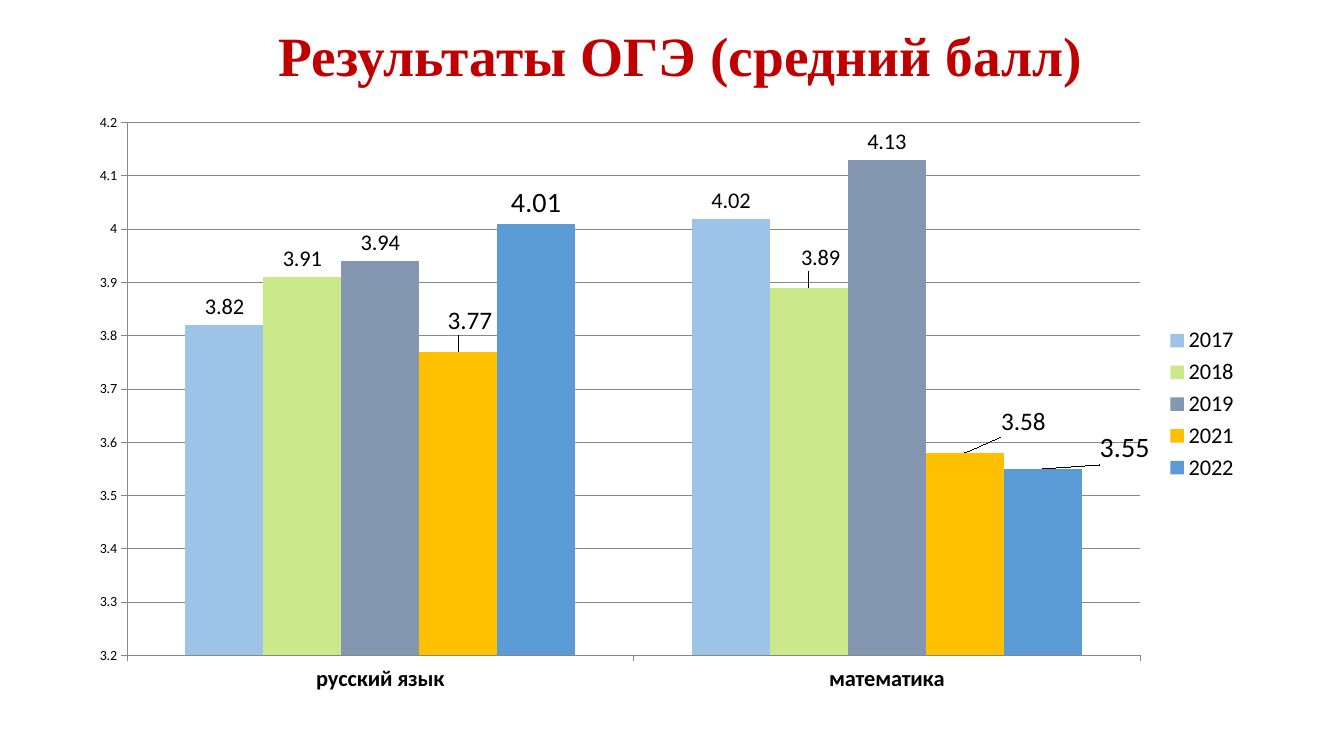
from lxml.etree import SubElement
from pptx import Presentation
from pptx.chart.data import CategoryChartData
from pptx.dml.color import RGBColor
from pptx.enum.chart import (XL_CHART_TYPE, XL_LABEL_POSITION,
                             XL_LEGEND_POSITION, XL_TICK_MARK)
from pptx.enum.text import MSO_ANCHOR, PP_ALIGN
from pptx.oxml import parse_xml
from pptx.oxml.ns import nsdecls, qn
from pptx.util import Inches, Pt

HUES = {"title": "C00000", "text": "000000", "grid": "888888",
        "2017": "9DC3E6", "2018": "CBE88A", "2019": "8497B0",
        "2021": "FFC000", "2022": "5B9BD5"}
TOPICS = ["русский язык", "математика"]
MARKS = {"2017": (3.82, 4.02), "2018": (3.91, 3.89), "2019": (3.94, 4.13),
         "2021": (3.77, 3.58), "2022": (4.01, 3.55)}
SIZES = {"2021": 18, "2022": 20}
SHIFTS = {"2018": {1: (0.01, -0.02)},
          "2021": {0: (0.01, -0.02), 1: (0.05, -0.02)},
          "2022": {1: (0.07, 0)}}


def layout(**items):
    node = parse_xml(f"<c:layout {nsdecls('c')}><c:manualLayout/></c:layout>")
    for name, value in items.items():
        SubElement(node[0], qn(f"c:{name}")).set("val", str(value))
    return node


class Deck:
    def __init__(self):
        self.show = Presentation()
        self.show.slide_width = Inches(13.33)
        self.show.slide_height = Inches(7.5)
        self.slide = self.show.slides.add_slide(self.show.slide_layouts[5])

    def hue(self, name):
        return RGBColor.from_string(HUES[name])

    def title(self, text, *box):
        shape = self.slide.shapes.title
        shape.left, shape.top, shape.width, shape.height = map(Inches, box)
        frame = shape.text_frame
        frame.text = text
        frame.word_wrap = True
        frame.vertical_anchor = MSO_ANCHOR.TOP
        para = frame.paragraphs[0]
        para.alignment = PP_ALIGN.CENTER
        para.line_spacing = 0.9
        para.font.name = "Times New Roman"
        para.font.size = Pt(39.6)
        para.font.bold = True
        para.font.color.rgb = self.hue("title")

    def chart(self, *box):
        data = CategoryChartData()
        data.categories = TOPICS
        for year, marks in MARKS.items():
            data.add_series(year, marks)
        chart = self.slide.shapes.add_chart(
            XL_CHART_TYPE.COLUMN_CLUSTERED, *map(Inches, box), data).chart
        chart.has_title = False
        chart.font.name = "Calibri"
        chart.font.size = Pt(10)
        chart.font.color.rgb = self.hue("text")
        chart.has_legend = True
        chart.legend.position = XL_LEGEND_POSITION.RIGHT
        chart.legend.include_in_layout = False
        chart.legend.font.size = Pt(16)
        self.axes(chart)
        plot = chart.plots[0]
        plot.gap_width = 150
        plot.overlap = 0
        plot.vary_by_categories = False
        for series in plot.series:
            self.bars(series)
        area = chart._chartSpace.chart.plotArea
        for old in area.findall(qn("c:layout")):
            area.remove(old)
        area.insert(0, layout(layoutTarget="inner", xMode="edge", yMode="edge",
                              x=0.043, y=0.033, w=0.864, h=0.884))

    def axes(self, chart):
        for axis in (chart.category_axis, chart.value_axis):
            axis.major_tick_mark = XL_TICK_MARK.OUTSIDE
            axis.minor_tick_mark = XL_TICK_MARK.NONE
            axis.format.line.color.rgb = self.hue("grid")
        names = chart.category_axis.tick_labels.font
        names.size = Pt(16)
        names.bold = True
        scale = chart.value_axis
        scale.minimum_scale = 3.2
        scale.maximum_scale = 4.2
        scale.major_unit = 0.1
        scale.has_major_gridlines = True
        scale.major_gridlines.format.line.color.rgb = self.hue("grid")

    def bars(self, series):
        year = series.name
        size = Pt(SIZES.get(year, 16))
        series.format.fill.solid()
        series.format.fill.fore_color.rgb = self.hue(year)
        series.invert_if_negative = False
        labels = series.data_labels
        labels.show_value = True
        labels.position = XL_LABEL_POSITION.OUTSIDE_END
        labels.font.size = size
        labels.number_format = "0.00"
        labels.number_format_is_linked = False
        for spot, (x, y) in SHIFTS.get(year, {}).items():
            label = series.points[spot].data_label
            label.position = XL_LABEL_POSITION.OUTSIDE_END
            label.font.size = size
            query = f'.//c:dLbl[c:idx/@val="{spot}"]'
            series._element.xpath(query)[0].insert(1, layout(x=x, y=y))


def main():
    deck = Deck()
    deck.title("Результаты ОГЭ (средний балл)", 0.16, 0.23, 13.18, 1.41)
    deck.chart(0.76, 1.02, 11.63, 5.98)
    deck.show.save("out.pptx")


if __name__ == "__main__":
    main()
